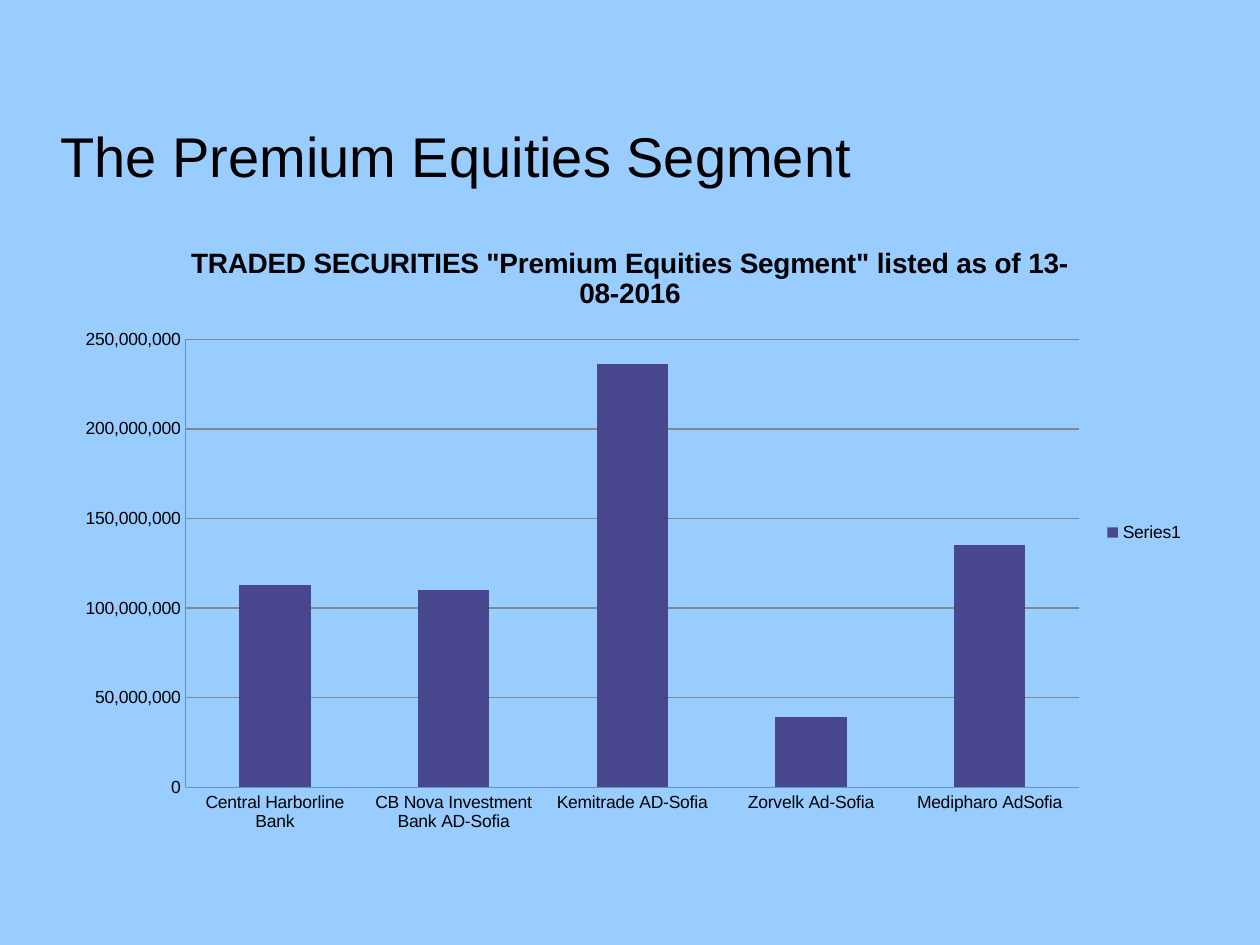
from pptx import Presentation
from pptx.chart.data import CategoryChartData
from pptx.dml.color import RGBColor
from pptx.enum.chart import XL_CHART_TYPE as ChartType, XL_LEGEND_POSITION as LegendPosition
from pptx.enum.chart import XL_TICK_MARK as TickMark
from pptx.enum.text import MSO_ANCHOR as Anchor
from pptx.util import Cm, Pt

# Content
TITLE = "The Premium Equities Segment"
CHART_TITLE = 'TRADED SECURITIES "Premium Equities Segment" listed as of 13-08-2016'
SERIES_NAME = "Series1"
SECURITIES = [
    ("Central Harborline Bank", 113_000_000),
    ("CB Nova Investment Bank AD-Sofia", 110_000_000),
    ("Kemitrade AD-Sofia", 236_000_000),
    ("Zorvelk Ad-Sofia", 39_000_000),
    ("Medipharo AdSofia", 135_000_000),
]
COLORS = {
    "background": "99CCFF",
    "text": "000000",
    "bar": "48468C",
    "grid": "878787",
    "axis": "5E93C9",
}
FONT = "Arial"


def color(name):
    return RGBColor.from_string(COLORS[name])


def style_font(font, size, bold=False):
    font.name = FONT
    font.size = Pt(size)
    font.bold = bold
    font.color.rgb = color("text")


presentation = Presentation()
presentation.slide_width, presentation.slide_height = Cm(25.4), Cm(19.05)
slide = presentation.slides.add_slide(presentation.slide_layouts[6])
slide.background.fill.solid()
slide.background.fill.fore_color.rgb = color("background")

# Slide title
title_box = slide.shapes.add_textbox(Cm(0.97), Cm(0.76), Cm(24.08), Cm(3.18))
text_frame = title_box.text_frame
text_frame.word_wrap = True
text_frame.vertical_anchor = Anchor.BOTTOM
text_frame.text = TITLE
style_font(text_frame.paragraphs[0].runs[0].font, 32)

# Column chart
chart_data = CategoryChartData(number_format="#,##0")
chart_data.categories = [name for name, _ in SECURITIES]
chart_data.add_series(SERIES_NAME, [value for _, value in SECURITIES])
chart = slide.shapes.add_chart(
    ChartType.COLUMN_CLUSTERED, Cm(1.27), Cm(4.45), Cm(22.86), Cm(12.57), chart_data
).chart
style_font(chart.font, 10)

chart.has_title = True
chart_title = chart.chart_title.text_frame
chart_title.text = CHART_TITLE
style_font(chart_title.paragraphs[0].runs[0].font, 16, bold=True)
chart.chart_title.include_in_layout = False

chart.has_legend = True
chart.legend.position = LegendPosition.RIGHT
chart.legend.include_in_layout = False

# Bars
plot = chart.plots[0]
plot.gap_width = 150
plot.vary_by_categories = False
bar_fill = plot.series[0].format.fill
bar_fill.solid()
bar_fill.fore_color.rgb = color("bar")

# Axes and gridlines
for axis in (chart.category_axis, chart.value_axis):
    axis.major_tick_mark = axis.minor_tick_mark = TickMark.NONE
    axis.format.line.color.rgb = color("axis")
    axis.format.line.width = Pt(0.75)
value_axis = chart.value_axis
value_axis.minimum_scale, value_axis.maximum_scale = 0, 250_000_000
value_axis.major_unit = 50_000_000
value_axis.tick_labels.number_format = "#,##0"
value_axis.tick_labels.number_format_is_linked = False
value_axis.has_major_gridlines = True
grid_line = value_axis.major_gridlines.format.line
grid_line.color.rgb = color("grid")
grid_line.width = Pt(0.75)

presentation.save("out.pptx")
